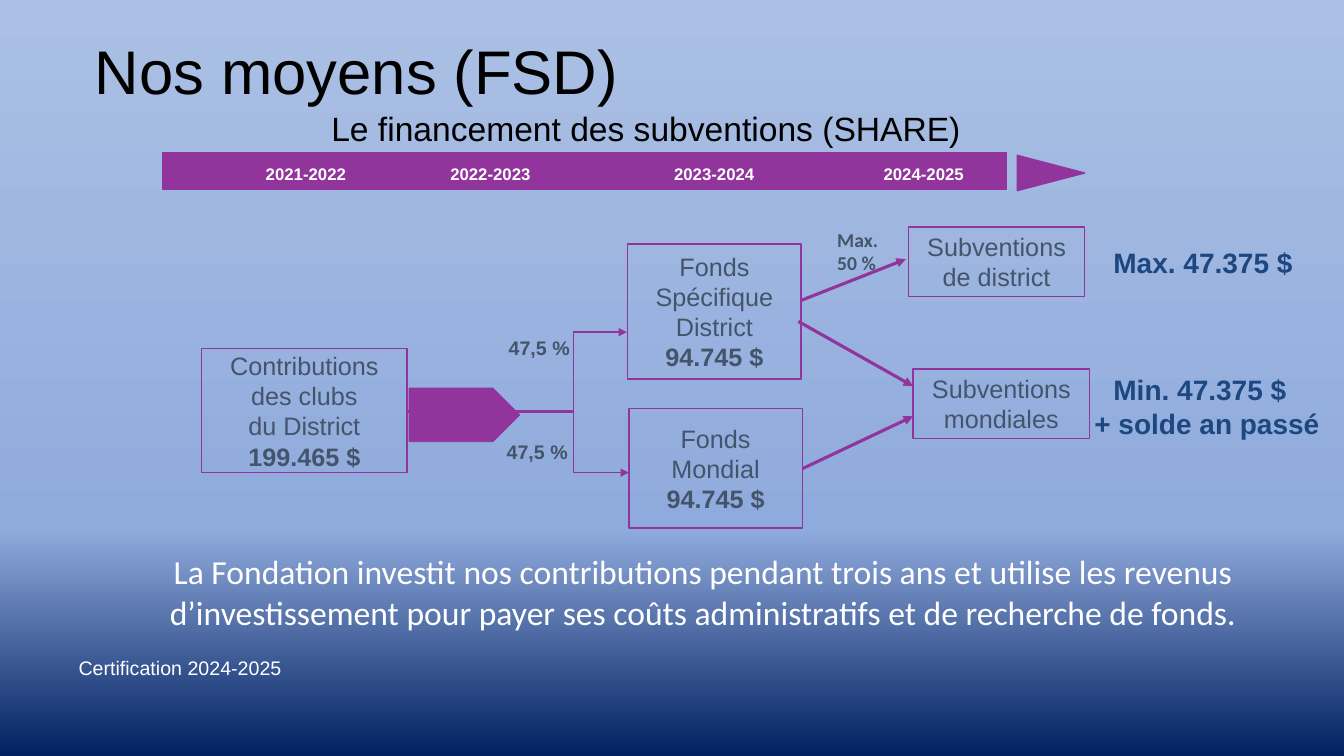
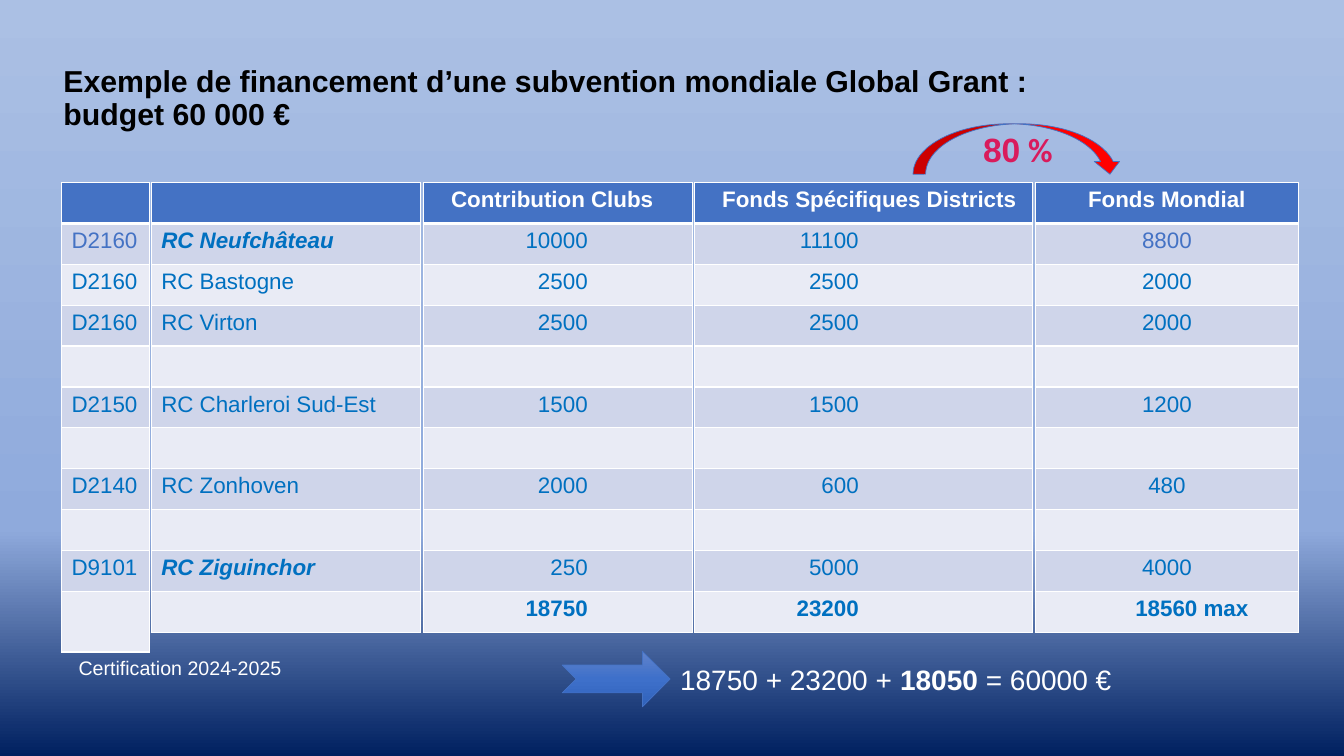
from copy import deepcopy
from lxml.etree import SubElement
from pptx import Presentation
from pptx.dml.color import RGBColor
from pptx.enum.shapes import MSO_CONNECTOR as Link, MSO_SHAPE as Form
from pptx.enum.text import MSO_ANCHOR as Anchor, PP_ALIGN as Align
from pptx.oxml.ns import qn
from pptx.util import Cm, Pt

rgb = RGBColor.from_string
PURPLE, SLATE, NAVY = "91359C", "44546A", "1D4781"
BLUE, SKY, WHITE, BLACK = "4472C4", "0070C0", "FFFFFF", "000000"


def draw(slide, kind, box, fill=None, line=None, width=1):
    place = [Cm(v) for v in box]
    if kind is None:
        shape = slide.shapes.add_textbox(*place)
    else:
        shape = slide.shapes.add_shape(kind, *place)
        shape.shadow.inherit = False
        shape.line.color.rgb = rgb(line)
        shape.line.width = Pt(width)
        if fill:
            shape.fill.solid()
            shape.fill.fore_color.rgb = rgb(fill)
        else:
            shape.fill.background()
    shape.text_frame.word_wrap = True
    return shape


def write(frame, text, size, color, bold=False, align=Align.LEFT, face="Arial"):
    frame.text = text
    for para in frame.paragraphs:
        para.alignment = align
        font = para.font
        font.name, font.size, font.bold = face, Pt(size), bold
        font.color.rgb = rgb(color)
    return frame.paragraphs


deck = Presentation()
deck.slide_width, deck.slide_height = Cm(33.87), Cm(19.05)
master = deck.slide_master
blank = deck.slide_layouts[6]
funds = deck.slides.add_slide(blank)
grant = deck.slides.add_slide(blank)

foot = draw(funds, None, (1.73, 16.41, 9.5, 0.86))
write(foot.text_frame, "Certification 2024-2025", 14, WHITE)
master.shapes.element.append(foot.element)

title = draw(funds, None, (0, 0.38, 17.98, 2.46)).text_frame
title.vertical_anchor = Anchor.BOTTOM
write(title, "Nos moyens (FSD)", 44, BLACK, align=Align.CENTER)[0].line_spacing = 0.9
sub = draw(funds, None, (5.46, 2.79, 21.64, 1.14)).text_frame
write(sub, "Le financement des subventions (SHARE)", 24, BLACK,
      align=Align.CENTER)[0].line_spacing = 0.8

draw(funds, Form.RECTANGLE, (4.11, 3.84, 21.26, 0.94), PURPLE, PURPLE)
tip = draw(funds, Form.ISOSCELES_TRIANGLE, (26.04, 3.51, 0.89, 1.7), PURPLE, PURPLE)
tip.rotation = 90
for year, left in ((2021, 6.12), (2022, 10.77), (2023, 16.41), (2024, 21.69)):
    label = draw(funds, None, (left, 3.99, 3.18, 0.76))
    write(label.text_frame, f"{year}-{year + 1}", 12, WHITE, True, Align.CENTER)

for box, text in (
    ((5.08, 8.79, 5.18, 3.12), "Contributions\ndes clubs\ndu District\n199.465 $"),
    ((15.82, 6.15, 4.37, 3.4), "Fonds\nSpécifique\nDistrict\n94.745 $"),
    ((15.85, 10.29, 4.37, 3.02), "Fonds\nMondial\n94.745 $"),
    ((22.89, 5.72, 4.45, 1.75), "Subventions\nde district"),
    ((23.01, 9.3, 4.45, 1.75), "Subventions\nmondiales"),
):
    frame = draw(funds, Form.RECTANGLE, box, line=PURPLE).text_frame
    frame.vertical_anchor = Anchor.MIDDLE
    lines = write(frame, text, 18, SLATE, align=Align.CENTER)
    lines[-1].font.bold = text.endswith("$")

for x1, y1, x2, y2, width, arrow in (
    (10.26, 10.36, 14.45, 10.36, 2.25, False),
    (20.19, 7.57, 22.83, 6.53, 2.25, True),
    (20.12, 8.1, 23.01, 9.73, 2.25, True),
    (20.22, 11.81, 23.01, 10.49, 2.25, True),
    (14.45, 8.37, 15.8, 8.37, 1, True),
    (14.45, 8.37, 14.45, 11.91, 1, False),
    (14.45, 11.91, 15.85, 11.91, 1, True),
):
    link = funds.shapes.add_connector(Link.STRAIGHT, Cm(x1), Cm(y1), Cm(x2), Cm(y2))
    link.line.color.rgb = rgb(PURPLE)
    link.line.width = Pt(width)
    if arrow:
        SubElement(link.line._get_or_add_ln(), qn("a:tailEnd"), type="triangle")
    SubElement(link.element.spPr, qn("a:effectLst"))

draw(funds, Form.PENTAGON, (10.31, 9.78, 2.79, 1.35), PURPLE, PURPLE, 0.5)

for box, text, size, color, face in (
    ((12.57, 8.33, 2.21, 0.86), "47,5 %", 14, SLATE, "Arial"),
    ((12.52, 10.97, 2.79, 0.86), "47,5 %", 14, SLATE, "Arial"),
    ((20.85, 5.61, 1.7, 1.45), "Max. 50 %", 14, SLATE, "Calibri"),
    ((27.81, 6.05, 6.02, 1.12), "Max. 47.375 $", 20, NAVY, "Arial"),
):
    write(draw(funds, None, box).text_frame, text, size, color, True, face=face)

least = draw(funds, None, (27.33, 9.27, 6.4, 1.96)).text_frame
lines = write(least, "Min. 47.375 $\n+ solde an passé", 20, NAVY, True)
lines[0]._p.get_or_add_pPr().set("indent", str(Cm(0.48)))

note = draw(funds, None, (3.73, 13.77, 27.97, 3)).text_frame
write(note, "La Fondation investit nos contributions pendant trois ans et utilise les "
      "revenus d’investissement pour payer ses coûts administratifs et de recherche "
      "de fonds.", 24, WHITE, align=Align.CENTER, face="Calibri")

title = draw(grant, None, (1.35, 1, 26.95, 2.45)).text_frame
title.vertical_anchor = Anchor.BOTTOM
write(title, "Exemple de financement d’une subvention mondiale Global Grant : "
      "budget 60 000 €", 21.6, BLACK, True)[0].line_spacing = 0.9

rows = (
    ("", "", "Contribution Clubs", "Fonds Spécifiques Districts", "Fonds Mondial"),
    ("D2160", "RC Neufchâteau", "10000", "11100", "8800"),
    ("D2160", "RC Bastogne", "2500", "2500", "2000"),
    ("D2160", "RC Virton", "2500", "2500", "2000"),
    ("",) * 5,
    ("D2150", "RC Charleroi Sud-Est", "1500", "1500", "1200"),
    ("",) * 5,
    ("D2140", "RC Zonhoven", "2000", "600", "480"),
    ("",) * 5,
    ("D9101", "RC Ziguinchor", "250", "5000", "4000"),
    ("", "", "18750", "23200", "18560 max"),
)
last = len(rows) - 1
tall = 1.03
cols = (
    (1.55, 2.21, Align.LEFT, 0.25),
    (3.81, 6.78, Align.LEFT, 0.25),
    (10.67, 6.78, Align.RIGHT, 2.64),
    (17.5, 8.51, Align.RIGHT, 4.37),
    (26.09, 6.63, Align.CENTER, 0.25),
)
for c, (left, width, align, inset) in enumerate(cols):
    grid = grant.shapes.add_table(len(rows), 1, Cm(left), Cm(4.6), Cm(width),
                                  Cm(tall * len(rows))).table
    for r, row in enumerate(rows):
        text = row[c]
        cell = grid.cell(r, 0)
        head = r == 0
        star = text in ("RC Neufchâteau", "RC Ziguinchor")
        color = WHITE if head else BLUE if r == 1 and c in (0, 4) else SKY
        side = Align.LEFT if head and c < 4 else align
        lines = write(cell.text_frame, text, 16, color, head or star or r == last, side)
        lines[0].font.italic = star
        if head and c in (2, 3):
            cell.margin_left = Cm(0.7)
        elif not head:
            cell.margin_right = Cm(inset)
        if r == last and c == 4:
            cell.margin_left = Cm(1.51)
        props = cell._tc.get_or_add_tcPr()
        for edge in "LRTB":
            thick = 3 if (head and edge == "B") or (r == 1 and edge == "T") else 1
            line = SubElement(props, qn(f"a:ln{edge}"), w=str(Pt(thick)))
            SubElement(SubElement(line, qn("a:solidFill")), qn("a:srgbClr"), val=WHITE)
        cell.fill.solid()
        cell.fill.fore_color.rgb = rgb(BLUE if head else "CFD5EA" if r % 2 else "E9EBF5")
        grid.rows[r].height = Cm(1.53 if c == 0 and r == last else tall)

curve = draw(grant, Form.CURVED_DOWN_ARROW, (23.01, 3.12, 5.28, 1.27), "FF0000", BLUE, 0.5)
curve.text_frame.vertical_anchor = Anchor.MIDDLE
share = write(curve.text_frame, "80", 24, "D91B5C", True, Align.CENTER)[0].add_run()
share.text, share.font.name = " %", "Calibri"

total = draw(grant, None, (16.89, 16.56, 12.75, 1.12)).text_frame
para = write(total, "18750 + 23200 + ", 20, WHITE)[0]
for text, bold in (("18050", True), (" = 60000 €", False)):
    run = para.add_run()
    run.text, run.font.bold = text, bold
notch = draw(grant, Form.NOTCHED_RIGHT_ARROW, (14.17, 16.41, 2.72, 1.4), BLUE, BLUE, 0.5)

for fill, middle, tones in (
    (master.background.fill, 0.7, ("ABC0E4", "8FAADC", "002060")),
    (notch.fill, 0.5, ("6183CB", "3E70CA", "3062BB")),
):
    fill.gradient()
    fill.gradient_angle = 270
    first = fill.gradient_stops[0]._gs
    first.addnext(deepcopy(first))
    for stop, spot, tone in zip(fill.gradient_stops, (0, middle, 1), tones):
        stop.position = spot
        stop.color.rgb = rgb(tone)

deck.save("out.pptx")
